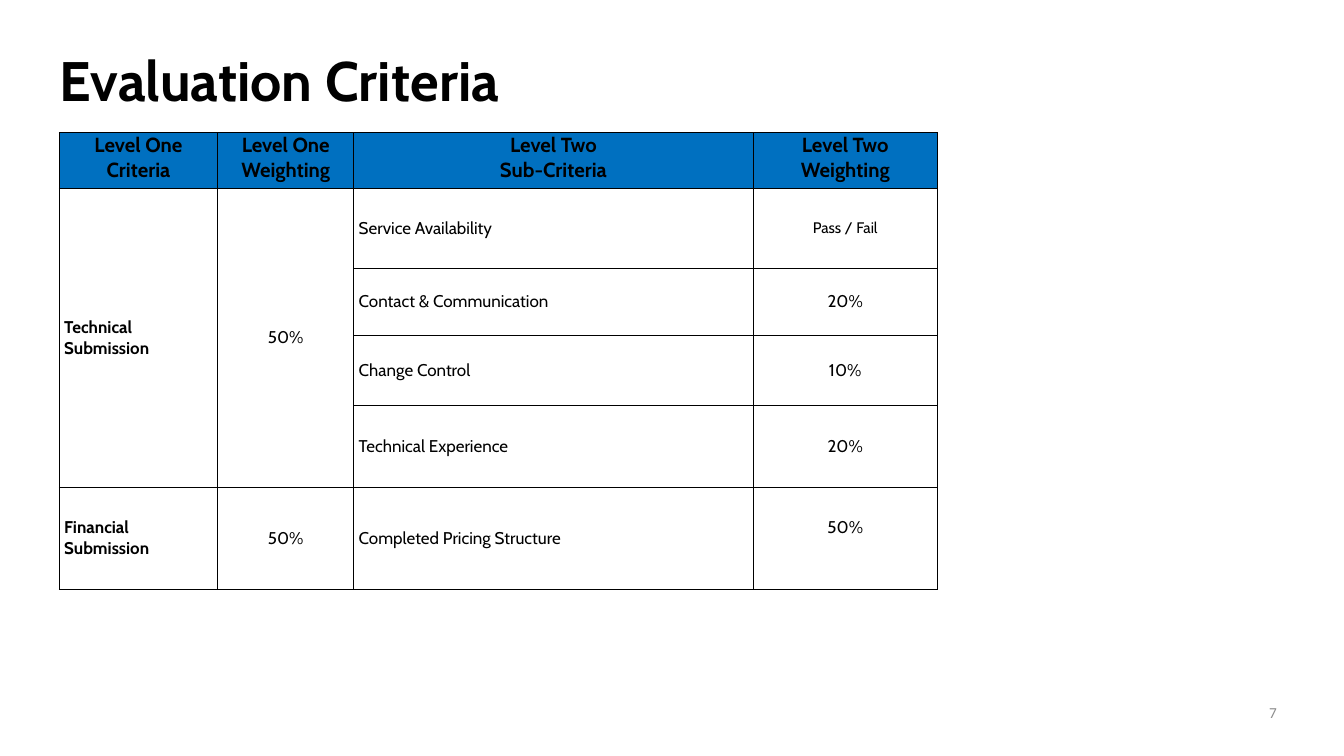
from lxml import etree
from pptx import Presentation
from pptx.dml.color import RGBColor
from pptx.enum.text import MSO_ANCHOR, MSO_AUTO_SIZE, PP_ALIGN
from pptx.oxml.ns import qn
from pptx.util import Inches, Pt

LEFT, CENTER, RIGHT = PP_ALIGN.LEFT, PP_ALIGN.CENTER, PP_ALIGN.RIGHT
TOP, MIDDLE = MSO_ANCHOR.TOP, MSO_ANCHOR.MIDDLE
NO_FIT = MSO_AUTO_SIZE.NONE

COLORS = {"text": "000000", "header": "0070C0", "cell": "FFFFFF",
          "border": "000000", "number": "8C8C8C"}
TITLE_ONLY = 5
MARGIN = 4.41  # left edge, percent of slide width

# Percent of the slide's width and height
COLS = [11.78, 10.14, 29.7, 13.73]
ROWS = [7.36, 10.59, 8.81, 9.38, 10.75, 13.5]

HEADERS = ["Level One Criteria", "Level One Weighting",
           "Level Two\vSub-Criteria", "Level Two Weighting"]
CRITERIA = [
    ("Technical Submission", "50%", [
        ("Service Availability", "Pass / Fail"),
        ("Contact & Communication", "20%"),
        ("Change Control", "10%"),
        ("Technical Experience", "20%"),
    ]),
    ("Financial Submission", "50%", [
        ("Completed Pricing Structure", "50%"),
    ]),
]


class Deck:
    """Holds the style and the current slide; lengths are percent of its size."""

    def __init__(self, width, height, font="Cabin"):
        self.prs = Presentation()
        self.prs.slide_width, self.prs.slide_height = Inches(width), Inches(height)
        self.font = font
        self.s = self.prs.slides.add_slide(self.prs.slide_layouts[TITLE_ONLY])

    def x(self, share):
        return round(self.prs.slide_width * share / 100)

    def y(self, share):
        return round(self.prs.slide_height * share / 100)

    def box(self, left, top, width, height):
        return self.x(left), self.y(top), self.x(width), self.y(height)

    def add_text(self, tf, text, size, bold=False, align=LEFT, color="text", font=None):
        p = tf.paragraphs[0]
        p.alignment = align
        for i, line in enumerate(text.split("\v")):
            if i:
                p.add_line_break()
            r = p.add_run()
            r.text = line
            r.font.name, r.font.size, r.font.bold = font or self.font, Pt(size), bold
            r.font.color.rgb = RGBColor.from_string(COLORS[color])

    def frame(self, tf):
        tf.word_wrap, tf.auto_size, tf.vertical_anchor = True, NO_FIT, TOP
        tf.margin_left = tf.margin_top = tf.margin_right = tf.margin_bottom = 0

    def title(self, text, *box):
        sp = self.s.shapes.title
        sp.left, sp.top, sp.width, sp.height = self.box(*box)
        self.frame(sp.text_frame)
        self.add_text(sp.text_frame, text, 65.5, bold=True)

    def page_number(self, text, *box):
        tf = self.s.shapes.add_textbox(*self.box(*box)).text_frame
        self.frame(tf)
        self.add_text(tf, text, 18, align=RIGHT, color="number", font="Calibri")

    def table(self, left, top, cols, rows):
        gf = self.s.shapes.add_table(len(rows), len(cols),
                                     *self.box(left, top, sum(cols), sum(rows)))
        table = gf.table
        table.first_row = table.horz_banding = False
        for col, share in zip(table.columns, cols):
            col.width = self.x(share)
        for row, share in zip(table.rows, rows):
            row.height = self.y(share)
        for cell in table.iter_cells():
            cell.margin_left = cell.margin_right = Inches(0.08)
            cell.margin_top = cell.margin_bottom = 0
            cell.vertical_anchor = MIDDLE
            self.borders(cell)
            self.fill(cell, "cell")
        return table

    def fill(self, cell, color):
        cell.fill.solid()
        cell.fill.fore_color.rgb = RGBColor.from_string(COLORS[color])

    def borders(self, cell):
        tc_pr = cell._tc.get_or_add_tcPr()
        for side in ("a:lnL", "a:lnR", "a:lnT", "a:lnB"):
            ln = etree.SubElement(tc_pr, qn(side), w=str(Pt(1)))
            fill = etree.SubElement(ln, qn("a:solidFill"))
            etree.SubElement(fill, qn("a:srgbClr"), val=COLORS["border"])

    def cell(self, table, row, col, text, size=20, bold=False, align=LEFT):
        cell = table.cell(row, col)
        self.add_text(cell.text_frame, text, size, bold, align)
        return cell


def main():
    deck = Deck(21.99, 12.37)
    deck.title("Evaluation Criteria", MARGIN, 6.06, 72.81, 14.39)
    deck.page_number("7", 71.99, 92.97, 23.01, 2.43)

    table = deck.table(MARGIN, 17.54, COLS, ROWS)
    for col, text in enumerate(HEADERS):
        cell = deck.cell(table, 0, col, text, 24, True, CENTER)
        cell.vertical_anchor = TOP
        deck.fill(cell, "header")

    row = 1
    for name, weight, subs in CRITERIA:
        last = row + len(subs) - 1
        if last > row:
            for col in (0, 1):
                table.cell(row, col).merge(table.cell(last, col))
        deck.cell(table, row, 0, name, bold=True)
        deck.cell(table, row, 1, weight, align=CENTER)
        for sub, share in subs:
            deck.cell(table, row, 2, sub)
            size = 20 if share.endswith("%") else 18
            score = deck.cell(table, row, 3, share, size, align=CENTER)
            row += 1
    score.margin_bottom = Inches(0.35)  # the last score sits above the middle

    deck.prs.save("out.pptx")


if __name__ == "__main__":
    main()
